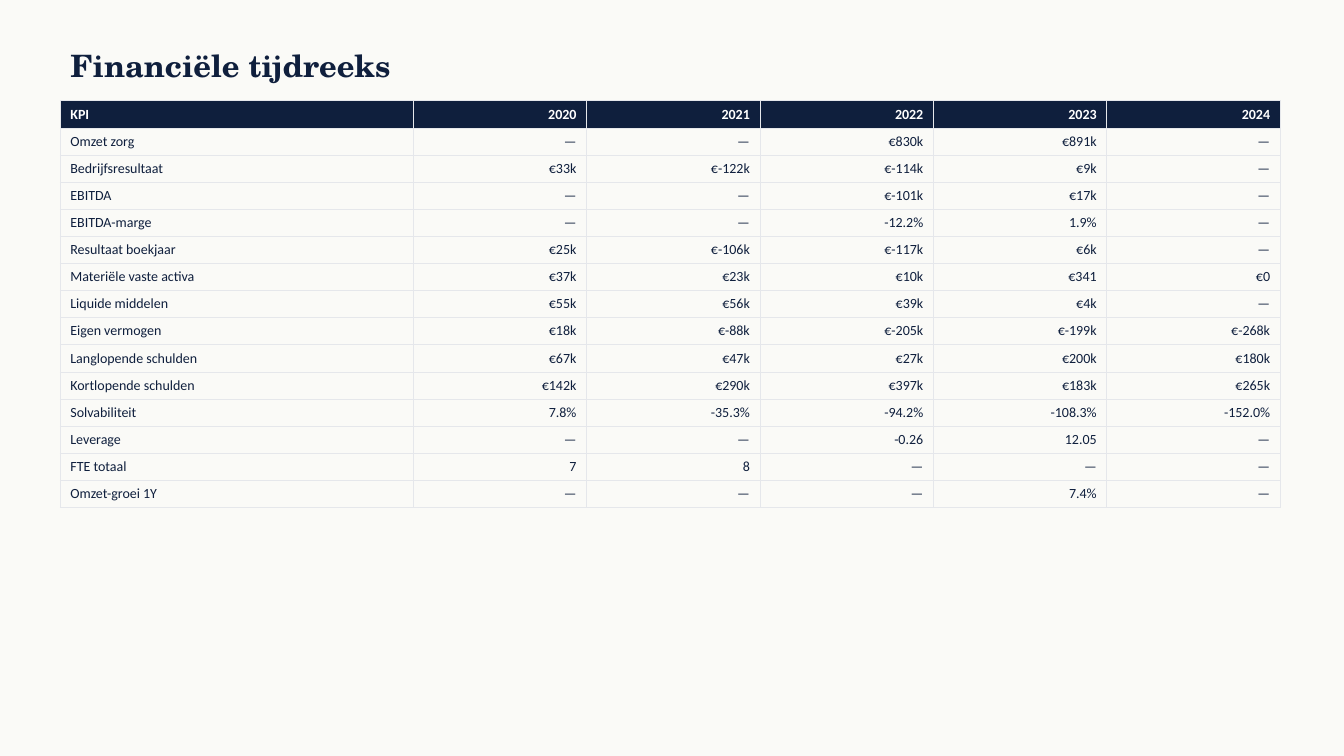
from lxml import etree
from pptx import Presentation
from pptx import util as u
from pptx.dml.color import RGBColor
from pptx.enum import text
from pptx.oxml import ns

COLORS = {"paper": "FAFAF7", "navy": "0F1F3D", "white": "FFFFFF", "grid": "E5E7EB"}

YEARS = ["KPI", "2020", "2021", "2022", "2023", "2024"]
KPIS = [
    ["Omzet zorg", "—", "—", "€830k", "€891k", "—"],
    ["Bedrijfsresultaat", "€33k", "€-122k", "€-114k", "€9k", "—"],
    ["EBITDA", "—", "—", "€-101k", "€17k", "—"],
    ["EBITDA-marge", "—", "—", "-12.2%", "1.9%", "—"],
    ["Resultaat boekjaar", "€25k", "€-106k", "€-117k", "€6k", "—"],
    ["Materiële vaste activa", "€37k", "€23k", "€10k", "€341", "€0"],
    ["Liquide middelen", "€55k", "€56k", "€39k", "€4k", "—"],
    ["Eigen vermogen", "€18k", "€-88k", "€-205k", "€-199k", "€-268k"],
    ["Langlopende schulden", "€67k", "€47k", "€27k", "€200k", "€180k"],
    ["Kortlopende schulden", "€142k", "€290k", "€397k", "€183k", "€265k"],
    ["Solvabiliteit", "7.8%", "-35.3%", "-94.2%", "-108.3%", "-152.0%"],
    ["Leverage", "—", "—", "-0.26", "12.05", "—"],
    ["FTE totaal", "7", "8", "—", "—", "—"],
    ["Omzet-groei 1Y", "—", "—", "—", "7.4%", "—"],
]

LEFT = u.Cm(1.52)
ROW_HEIGHT = u.Cm(0.68)
KPI_WIDTH = u.Cm(8.89)
YEAR_WIDTH = u.Cm(4.37)


def rgb(name):
    return RGBColor.from_string(COLORS[name])


def write(tf, content, size=10, font="Calibri", color="navy", bold=False, align="LEFT"):
    p = tf.paragraphs[0]
    p.alignment = getattr(text.PP_ALIGN, align)
    r = p.add_run()
    r.text = content
    r.font.size = u.Pt(size)
    r.font.name = font
    r.font.bold = bold
    r.font.color.rgb = rgb(color)


def add_title(s, content):
    sp = s.shapes.title
    sp.left, sp.top, sp.width, sp.height = LEFT, u.Cm(1.02), u.Cm(30.48), u.Cm(1.27)
    tf = sp.text_frame
    tf.auto_size = text.MSO_AUTO_SIZE.NONE
    tf.vertical_anchor = text.MSO_ANCHOR.MIDDLE
    write(tf, content, size=22, font="TeX Gyre Schola", bold=True)


def add_borders(cell, color, width):
    props = cell._tc.get_or_add_tcPr()
    for i, side in enumerate(("lnL", "lnR", "lnT", "lnB")):
        ln = etree.Element(ns.qn(f"a:{side}"), w=str(u.Pt(width)))
        fill = etree.SubElement(ln, ns.qn("a:solidFill"))
        etree.SubElement(fill, ns.qn("a:srgbClr"), val=COLORS[color])
        props.insert(i, ln)


def format_cell(cell, content, header, first):
    if header:
        cell.fill.solid()
        cell.fill.fore_color.rgb = rgb("navy")
    else:
        cell.fill.background()
    add_borders(cell, "grid", 0.5)
    write(cell.text_frame, content, color="white" if header else "navy",
          bold=header, align="LEFT" if first else "RIGHT")


def add_kpi_table(s, rows):
    count = len(rows[0])
    width = KPI_WIDTH + YEAR_WIDTH * (count - 1)
    table = s.shapes.add_table(len(rows), count, LEFT, u.Cm(2.54),
                               width, ROW_HEIGHT * len(rows)).table
    table.horz_banding = False
    for j, column in enumerate(table.columns):
        column.width = YEAR_WIDTH if j else KPI_WIDTH
    for i, row in enumerate(rows):
        table.rows[i].height = ROW_HEIGHT
        for j, content in enumerate(row):
            format_cell(table.cell(i, j), content, header=i == 0, first=j == 0)


def main():
    prs = Presentation()
    prs.slide_width, prs.slide_height = u.Cm(33.87), u.Cm(19.05)
    s = prs.slides.add_slide(prs.slide_layouts[5])
    s.background.fill.solid()
    s.background.fill.fore_color.rgb = rgb("paper")
    add_title(s, "Financiële tijdreeks")
    add_kpi_table(s, [YEARS] + KPIS)
    prs.save("out.pptx")


if __name__ == "__main__":
    main()
